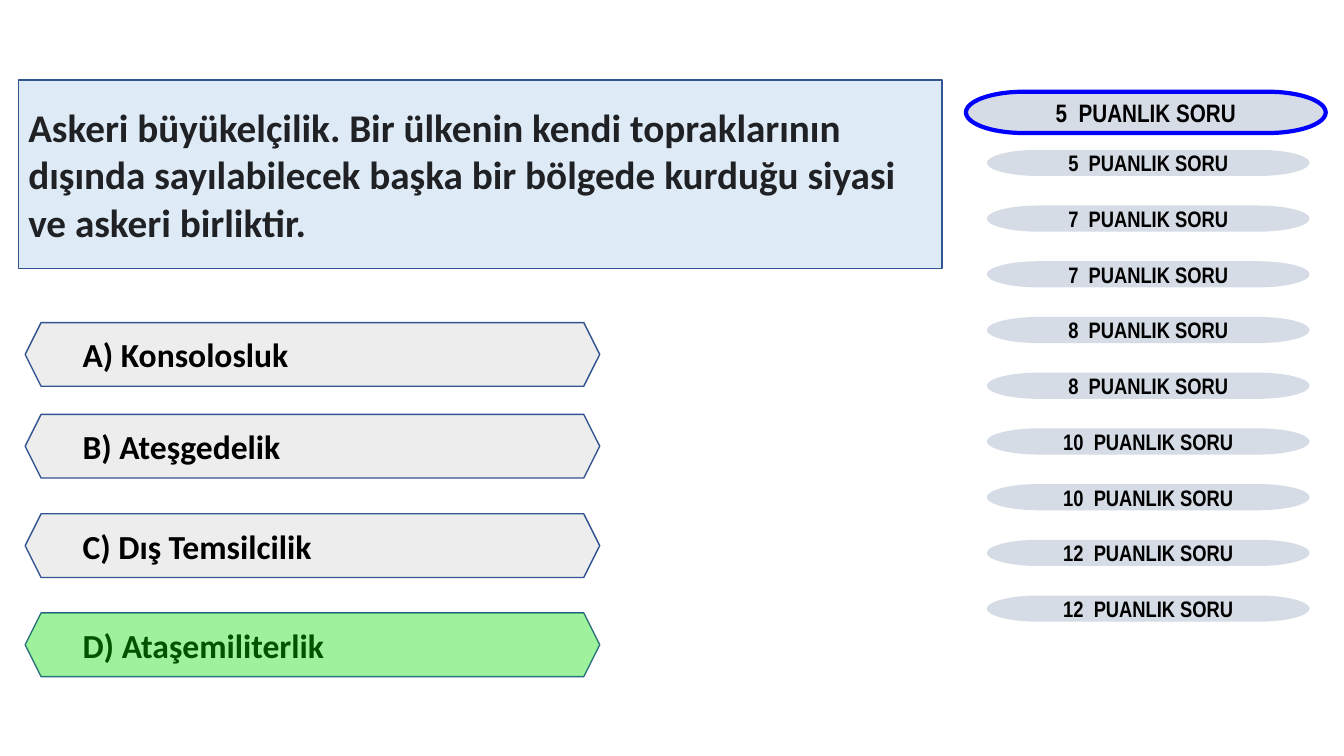
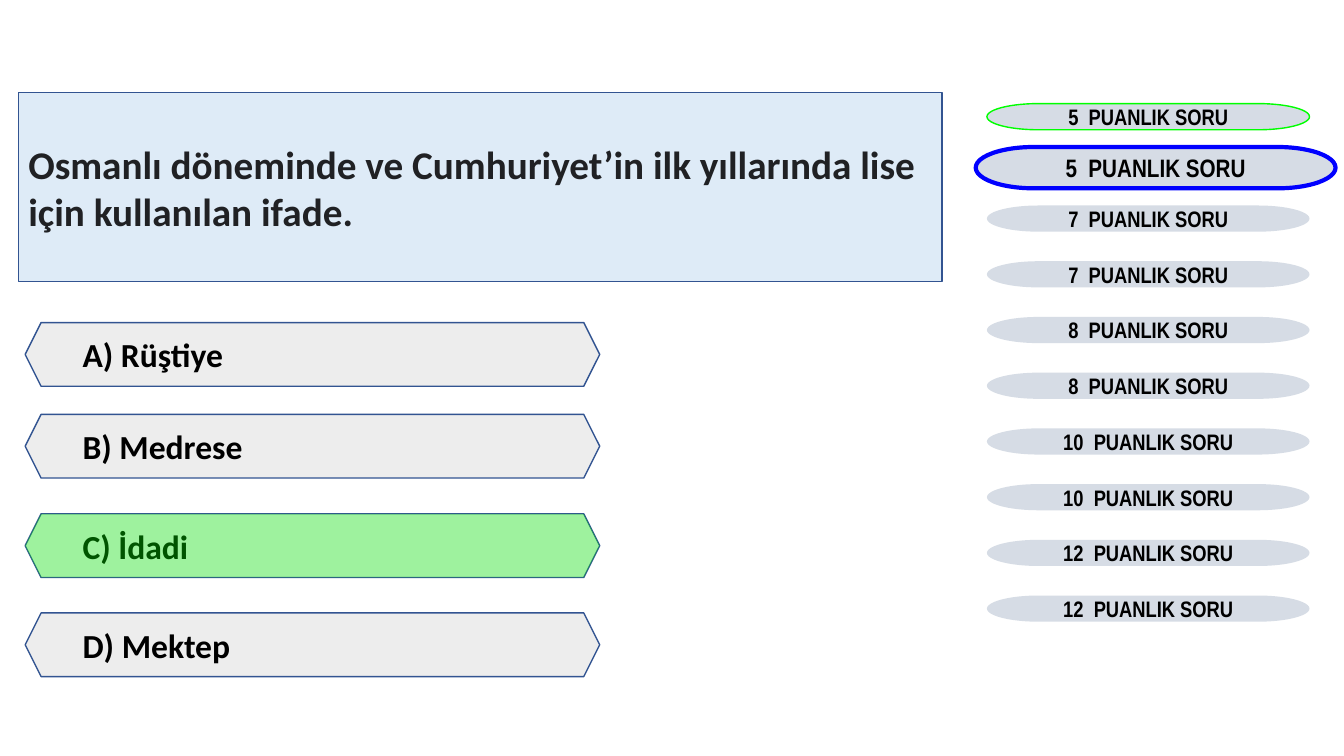
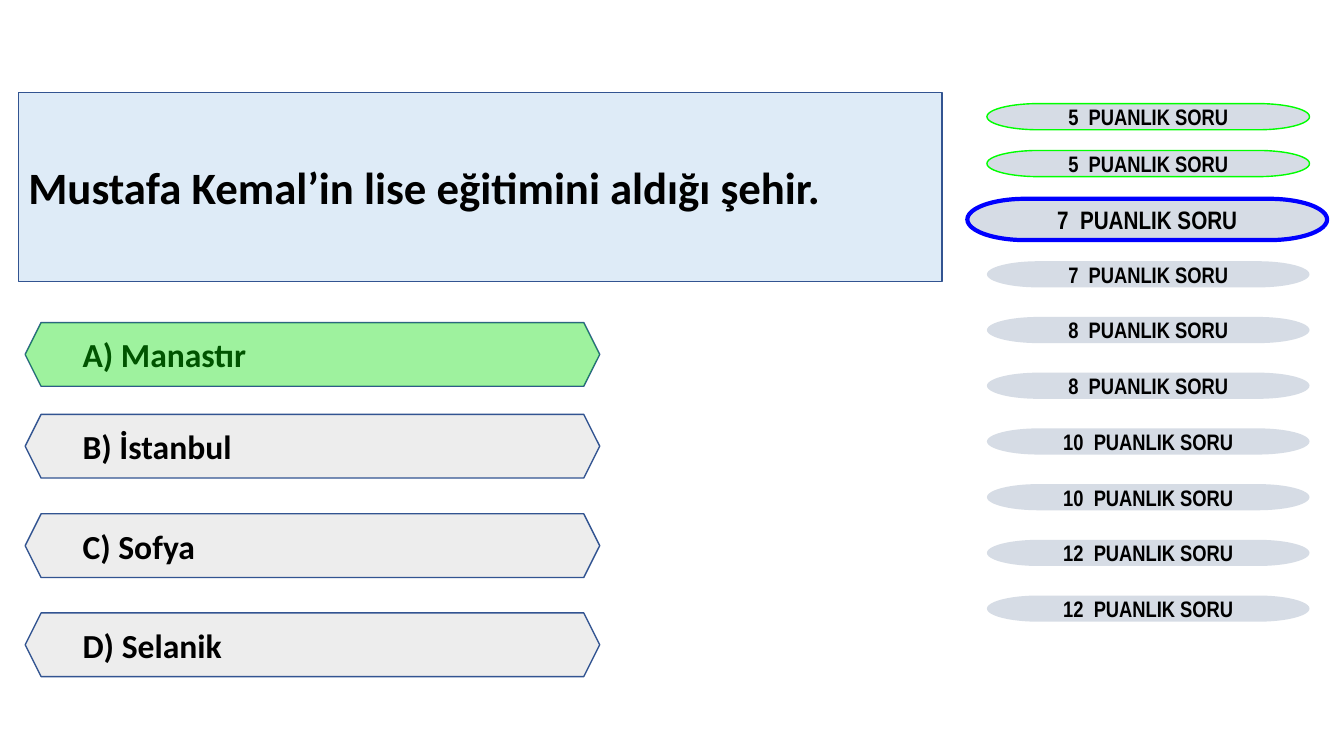
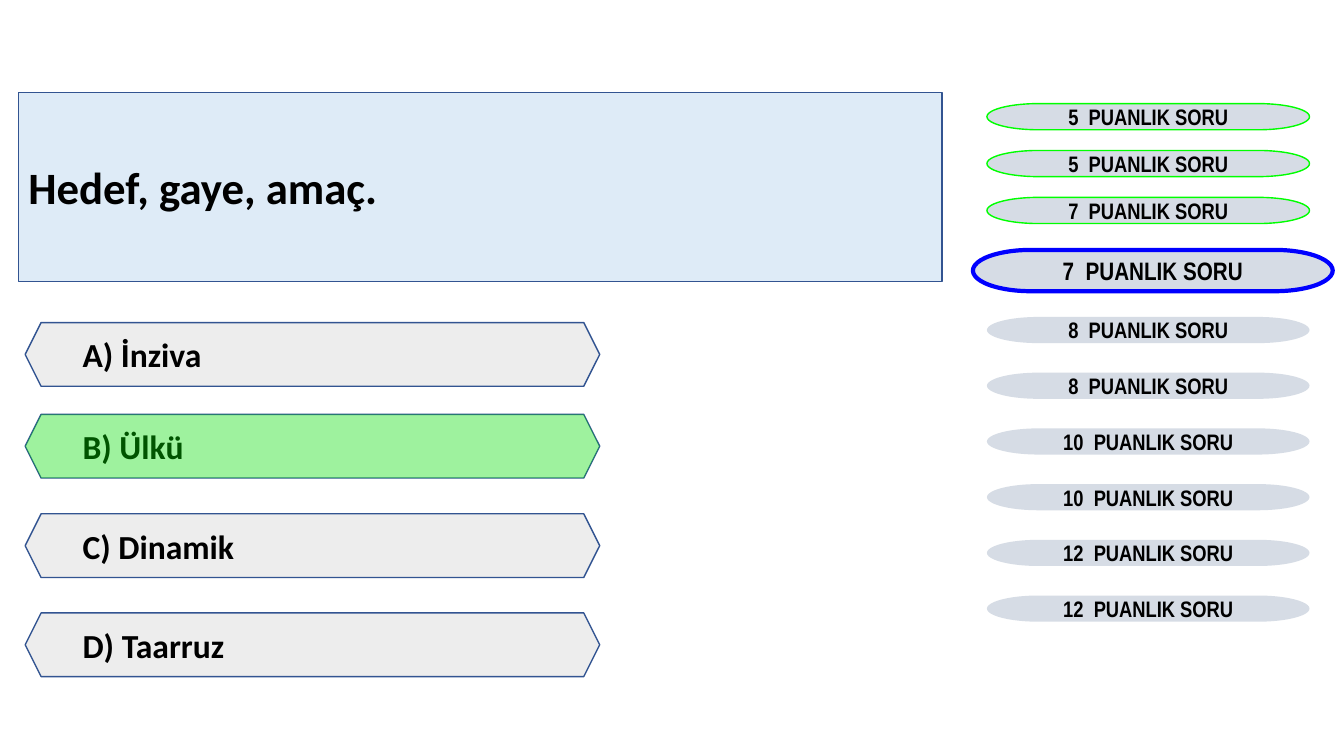
import pptx
import pptx.dml.color
import pptx.enum.shapes
import pptx.enum.text
import pptx.oxml
import pptx.oxml.ns
import pptx.util

Pt = pptx.util.Pt
SHAPES = pptx.enum.shapes.MSO_SHAPE
ALIGN = pptx.enum.text.PP_ALIGN
COLOURS = {
    "question": "DEEBF7",
    "answer": "EDEDED",
    "badge": "D6DCE5",
    "border": "325491",
    "current": "0000FF",
    "correct": "00FF00",
    "black": "000000",
    "charcoal": "202124",
}
POINTS = [5, 5, 7, 7, 8, 8, 10, 10, 12, 12]
ANSWER_TOPS = [230.4, 296, 367, 437.8]
QUESTIONS = [
    {
        "text": "Askeri büyükelçilik. Bir ülkenin kendi topraklarının dışında "
                "sayılabilecek başka bir bölgede kurduğu siyasi ve askeri birliktir.",
        "answers": ["Konsolosluk", "Ateşgedelik", "Dış Temsilcilik", "Ataşemiliterlik"],
        "correct": 3, "top": 57, "size": 28, "colour": "charcoal", "badge": (690, 65.5),
    },
    {
        "text": "Osmanlı döneminde ve Cumhuriyet’in ilk yıllarında lise için kullanılan ifade.",
        "answers": ["Rüştiye", "Medrese", "İdadi", "Mektep"],
        "correct": 2, "top": 66, "size": 28, "colour": "charcoal", "badge": (697, 105),
    },
    {
        "text": "Mustafa Kemal’in lise eğitimini aldığı şehir.",
        "answers": ["Manastır", "İstanbul", "Sofya", "Selanik"],
        "correct": 0, "top": 66, "size": 32, "colour": "black", "badge": (691, 142),
    },
    {
        "text": "Hedef, gaye, amaç.",
        "answers": ["İnziva", "Ülkü", "Dinamik", "Taarruz"],
        "correct": 1, "top": 66, "size": 32, "colour": "black", "badge": (695, 178.5),
    },
]


class Quiz:
    """Builds quiz slides in one shared style."""

    def __init__(self):
        self.deck = pptx.Presentation()
        self.deck.slide_width, self.deck.slide_height = Pt(960), Pt(540)
        self.page = None

    def new_page(self):
        self.page = self.deck.slides.add_slide(self.deck.slide_layouts[5])

    def colour(self, name):
        return pptx.dml.color.RGBColor.from_string(COLOURS[name])

    def apply(self, target, formats):
        for name, value in formats.items():
            setattr(target, name, value)

    def paint(self, box, fill, line=None, width=1):
        box.fill.solid()
        box.fill.fore_color.rgb = self.colour(fill)
        if line:
            box.line.color.rgb = self.colour(line)
            box.line.width = Pt(width)
        else:
            box.line.fill.background()

    def shape(self, kind, left, top, width, height, fill, line=None, weight=1):
        box = self.page.shapes.add_shape(kind, Pt(left), Pt(top), Pt(width), Pt(height))
        box.shadow.inherit = False
        self.paint(box, fill, line, weight)
        return box

    def label(self, box, text, size, font="Calibri", colour="black", align=ALIGN.LEFT, **frame):
        self.apply(box.text_frame, {
            "word_wrap": True,
            "auto_size": pptx.enum.text.MSO_AUTO_SIZE.NONE,
            "vertical_anchor": pptx.enum.text.MSO_ANCHOR.MIDDLE,
            **frame,
        })
        para = box.text_frame.paragraphs[0]
        para.alignment = align
        span = para.add_run()
        span.text = text
        self.apply(span.font, {"name": font, "size": Pt(size), "bold": True})
        span.font.color.rgb = self.colour(colour)

    def question(self, text, top, size, colour):
        box = self.page.shapes.title
        self.apply(box, {"left": Pt(13), "top": Pt(top), "width": Pt(660), "height": Pt(135)})
        box.element.spPr.append(pptx.oxml.parse_xml(
            f'<a:prstGeom {pptx.oxml.ns.nsdecls("a")} prst="roundRect"><a:avLst/></a:prstGeom>'))
        self.paint(box, "question", "border")
        self.label(box, text, size, colour=colour)

    def hexagon(self, top, fill, line=None):
        return self.shape(SHAPES.HEXAGON, 18, top, 410.4, 45.5, fill, line)

    def answers(self, texts, correct):
        margins = dict.fromkeys(
            ["margin_left", "margin_top", "margin_right", "margin_bottom"], Pt(3))
        for letter, text, top in zip("ABCD", texts, ANSWER_TOPS):
            box = self.hexagon(top, "answer", "border")
            self.label(box, f"{letter}) {text}", 24, **margins)
        marker = self.hexagon(ANSWER_TOPS[correct], "correct")
        tint = marker.element.spPr.find(".//" + pptx.oxml.ns.qn("a:srgbClr"))
        tint.append(pptx.oxml.parse_xml(
            f'<a:alpha {pptx.oxml.ns.nsdecls("a")} val="33000"/>'))

    def badges(self, current, place):
        for index, points in enumerate(POINTS):
            size, area, outline = 16, (230.4, 18.7), (None,)
            left, top = 705, 107 + 39.8 * (index - 1)
            if index < current:
                top, outline = 74 + 33.5 * index, ("correct", 1)
            elif index == current:
                size, area, outline = 18, (257, 29.5), ("current", 3)
                left, top = place
            box = self.shape(SHAPES.FLOWCHART_TERMINATOR, left, top, *area, "badge", *outline)
            self.label(box, f"{points}  PUANLIK SORU", size, "Arial Narrow", align=ALIGN.CENTER)


def main():
    quiz = Quiz()
    for number, item in enumerate(QUESTIONS):
        quiz.new_page()
        quiz.question(item["text"], item["top"], item["size"], item["colour"])
        quiz.answers(item["answers"], item["correct"])
        quiz.badges(number, item["badge"])
    quiz.deck.save("out.pptx")


if __name__ == "__main__":
    main()
